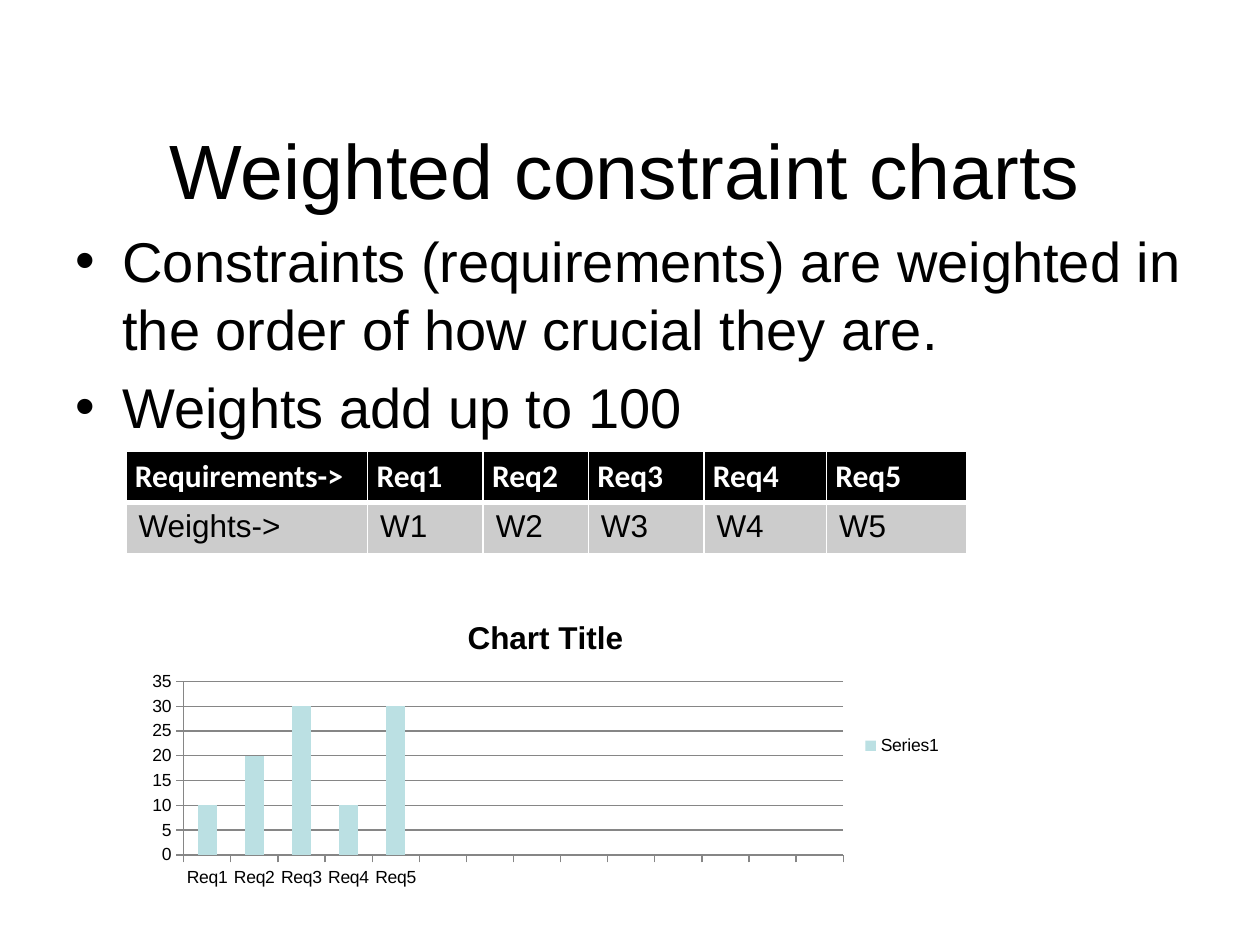
from dataclasses import dataclass

from lxml import etree
from pptx import Presentation
from pptx.chart.data import CategoryChartData
from pptx.dml.color import RGBColor
from pptx.enum.chart import XL_CHART_TYPE, XL_LEGEND_POSITION, XL_TICK_MARK
from pptx.enum.text import MSO_ANCHOR, MSO_AUTO_SIZE, PP_ALIGN
from pptx.oxml.ns import qn
from pptx.util import Cm, Pt

COLUMNS = XL_CHART_TYPE.COLUMN_CLUSTERED
LEGEND_RIGHT = XL_LEGEND_POSITION.RIGHT
TICK_OUT = XL_TICK_MARK.OUTSIDE
MIDDLE = MSO_ANCHOR.MIDDLE
NO_AUTOFIT = MSO_AUTO_SIZE.NONE
CENTER = PP_ALIGN.CENTER


@dataclass(frozen=True)
class Theme:
    text: str = "000000"
    header_text: str = "FFFFFF"
    header_fill: str = "000000"
    weight_fill: str = "CCCCCC"
    border: str = "FFFFFF"
    bar: str = "BBE0E3"
    grid: str = "868686"
    body_font: str = "Arial"
    header_font: str = "Calibri"
    title_size: int = 44
    bullet_size: int = 32
    table_size: int = 18
    chart_size: int = 10


THEME = Theme()

TITLE = "Weighted constraint charts"
BULLETS = [
    "Constraints (requirements) are weighted in the order of how crucial they are.",
    "Weights add up to 100",
]
REQUIREMENTS = [f"Req{n}" for n in range(1, 6)]
HEADER = ["Requirements->"] + REQUIREMENTS
WEIGHT_LABELS = ["Weights->"] + [f"W{n}" for n in range(1, 6)]
WEIGHTS = [10, 20, 30, 10, 30]
EMPTY_SLOTS = 9
COLUMN_WIDTHS = [4.87, 2.33, 2.12, 2.33, 2.47, 2.82]
ROW_HEIGHT = 1.03

# Boxes: left, top, width, height in centimetres
TITLE_BOX = (1.27, 2.34, 22.66, 2.11)
BULLET_BOX = (1.27, 4.45, 23.06, 13.33)
TABLE_BOX = (2.54, 9.1, sum(COLUMN_WIDTHS), 2 * ROW_HEIGHT)
CHART_BOX = (2.74, 12.07, 16.51, 5.93)


def apply(target, values):
    for name, value in values.items():
        setattr(target, name, value)


def format_font(font, size, name=THEME.body_font, color=THEME.text, bold=False):
    apply(font, {"size": Pt(size), "name": name, "bold": bold})
    font.color.rgb = RGBColor.from_string(color)


def add_title(slide, box):
    title = slide.shapes.title
    apply(title, dict(zip(("left", "top", "width", "height"), map(Cm, box))))
    frame = title.text_frame
    frame.text = TITLE
    apply(frame, {"vertical_anchor": MIDDLE, "word_wrap": True,
                  "auto_size": NO_AUTOFIT})
    heading = frame.paragraphs[0]
    heading.alignment = CENTER
    format_font(heading.font, THEME.title_size)


def add_bullets(slide, box):
    frame = slide.shapes.add_textbox(*map(Cm, box)).text_frame
    frame.word_wrap = True
    for index, text in enumerate(BULLETS):
        point = frame.add_paragraph() if index else frame.paragraphs[0]
        point.text = text
        if index:
            point.space_before = Pt(THEME.bullet_size * 0.2)
        properties = point._p.get_or_add_pPr()
        properties.set("marL", str(Cm(0.95)))
        properties.set("indent", str(-Cm(0.95)))
        etree.SubElement(properties, qn("a:buFont"), typeface=THEME.body_font)
        etree.SubElement(properties, qn("a:buChar"), char="•")
        format_font(point.font, THEME.bullet_size)


def set_borders(cell, top, bottom):
    properties = cell._tc.get_or_add_tcPr()
    widths = {"a:lnL": 1, "a:lnR": 1, "a:lnT": top, "a:lnB": bottom}
    for position, (edge, width) in enumerate(widths.items()):
        line = etree.Element(qn(edge), w=str(Pt(width)))
        fill = etree.SubElement(line, qn("a:solidFill"))
        etree.SubElement(fill, qn("a:srgbClr"), val=THEME.border)
        properties.insert(position, line)


def add_weight_table(slide, box):
    table = slide.shapes.add_table(2, len(HEADER), *map(Cm, box)).table
    table.horz_banding = False
    for column, width in zip(table.columns, COLUMN_WIDTHS):
        column.width = Cm(width)
    for row in table.rows:
        row.height = Cm(ROW_HEIGHT)

    # The heavy rule lies between the two rows
    header_style = {"name": THEME.header_font, "color": THEME.header_text, "bold": True}
    header_margins = {"margin_left": Cm(0.18), "margin_right": Cm(0.18),
                      "margin_top": 0, "margin_bottom": 0}
    rows = [
        (HEADER, THEME.header_fill, header_style, header_margins, 1.15, (1, 3)),
        (WEIGHT_LABELS, THEME.weight_fill, {}, {}, 1.0, (3, 1)),
    ]
    for r, (labels, fill, style, margins, spacing, rules) in enumerate(rows):
        for c, label in enumerate(labels):
            cell = table.cell(r, c)
            cell.text = label
            apply(cell, margins)
            cell.fill.solid()
            cell.fill.fore_color.rgb = RGBColor.from_string(fill)
            entry = cell.text_frame.paragraphs[0]
            entry.line_spacing = spacing
            format_font(entry.font, THEME.table_size, **style)
            set_borders(cell, *rules)


def add_weight_chart(slide, box):
    data = CategoryChartData()
    data.categories = REQUIREMENTS + [""] * EMPTY_SLOTS
    data.add_series("Series1", WEIGHTS + [None] * EMPTY_SLOTS)
    chart = slide.shapes.add_chart(COLUMNS, *map(Cm, box), data).chart
    format_font(chart.font, THEME.chart_size)

    # Heading and legend
    chart.has_title = True
    heading = chart.chart_title
    heading.include_in_layout = False
    heading.text_frame.text = "Chart Title"
    format_font(heading.text_frame.paragraphs[0].runs[0].font,
                THEME.table_size, bold=True)
    chart.has_legend = True
    apply(chart.legend, {"position": LEGEND_RIGHT, "include_in_layout": False})

    # Bars
    plot = chart.plots[0]
    apply(plot, {"gap_width": 150, "vary_by_categories": False})
    bars = plot.series[0]
    bars.invert_if_negative = False
    bars.format.fill.solid()
    bars.format.fill.fore_color.rgb = RGBColor.from_string(THEME.bar)

    # Axes
    scale = chart.value_axis
    apply(scale, {"minimum_scale": 0, "maximum_scale": 35, "major_unit": 5,
                  "has_major_gridlines": True})
    for axis in (chart.category_axis, scale):
        axis.major_tick_mark = TICK_OUT
        axis.format.line.color.rgb = RGBColor.from_string(THEME.grid)
    scale.major_gridlines.format.line.color.rgb = RGBColor.from_string(THEME.grid)


def main():
    deck = Presentation()
    apply(deck, {"slide_width": Cm(25.4), "slide_height": Cm(19.05)})
    slide = deck.slides.add_slide(deck.slide_layouts.get_by_name("Title Only"))
    add_title(slide, TITLE_BOX)
    add_bullets(slide, BULLET_BOX)
    add_weight_table(slide, TABLE_BOX)
    add_weight_chart(slide, CHART_BOX)
    deck.save("out.pptx")


if __name__ == "__main__":
    main()
